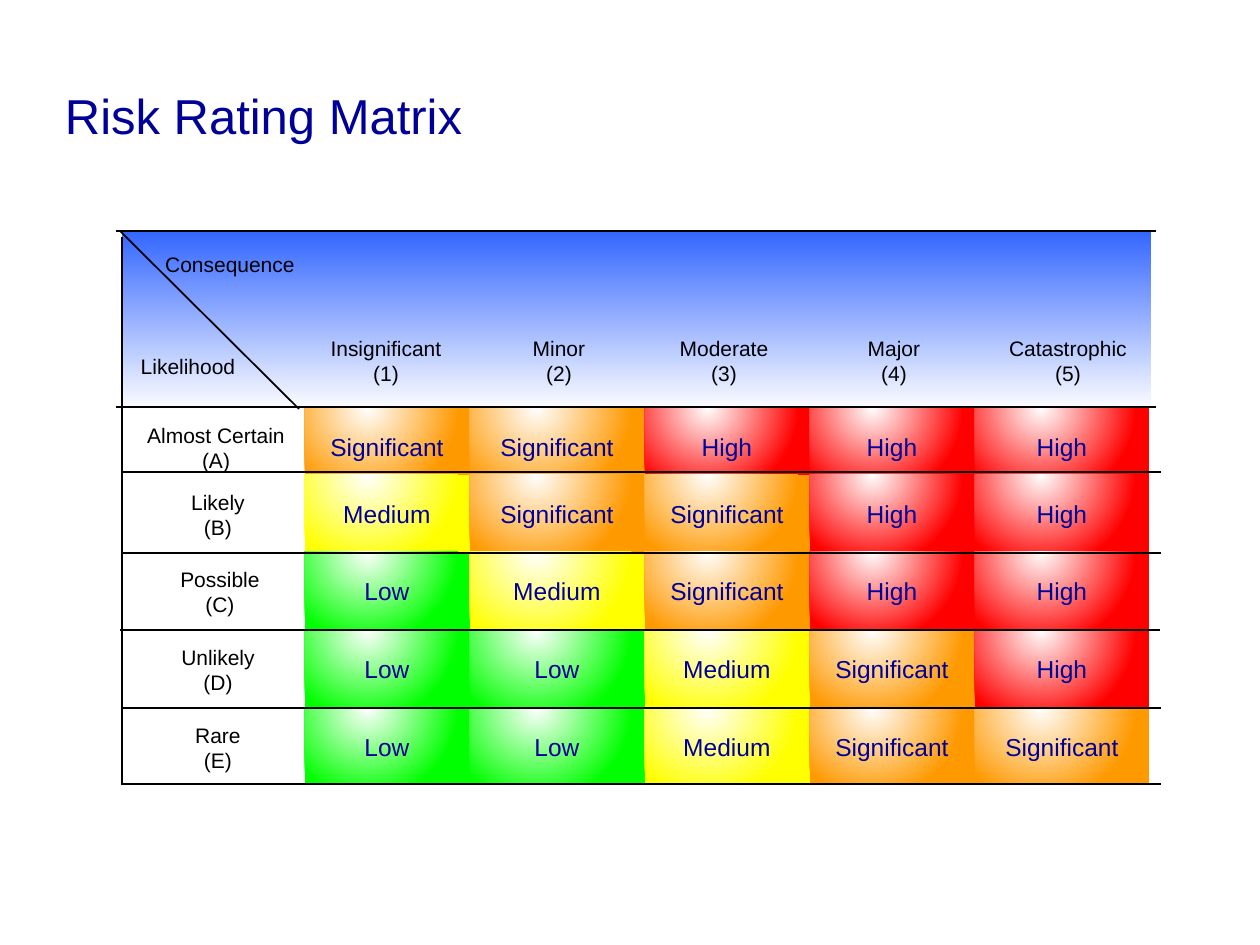
"""Build the risk rating matrix slide."""
from dataclasses import dataclass

import lxml.etree
import pptx
import pptx.dml.color
import pptx.enum.shapes
import pptx.enum.text
import pptx.oxml.ns
import pptx.util

PX = 914400 / 126
COLORS = {"white": "FFFFFF", "black": "000000", "navy": "000099", "header": "3366FF"}


@dataclass(frozen=True)
class Rating:
    name: str
    color: str
    width: int


@dataclass(frozen=True)
class Heading:
    name: str
    code: str
    center: int
    width: int


@dataclass(frozen=True)
class Row:
    heading: Heading
    top: int
    height: int
    ratings: str


@dataclass(frozen=True)
class Line:
    x1: int
    y1: int
    x2: int
    y2: int


RATINGS = {
    "L": Rating("Low", "00FF00", 59),
    "M": Rating("Medium", "FFFF00", 101),
    "S": Rating("Significant", "FF9900", 127),
    "H": Rating("High", "FF0000", 64),
}
COLUMN_EDGES = [305, 470, 645, 810, 975, 1149]
CONSEQUENCES = [
    Heading("Insignificant", "(1)", 386, 131),
    Heading("Minor", "(2)", 559, 72),
    Heading("Moderate", "(3)", 724, 108),
    Heading("Major", "(4)", 894, 72),
    Heading("Catastrophic", "(5)", 1068, 137),
]
ROWS = [
    Row(Heading("Almost Certain", "(A)", 216, 158), 408, 78, "SSHHH"),
    Row(Heading("Likely", "(B)", 218, 73), 475, 77, "MSSHH"),
    Row(Heading("Possible", "(C)", 220, 100), 552, 78, "LMSHH"),
    Row(Heading("Unlikely", "(D)", 218, 93), 630, 78, "LLMSH"),
    Row(Heading("Rare", "(E)", 218, 66), 708, 77, "LLMSS"),
]
LINES = [
    Line(120, 231, 299, 409),
    Line(122, 237, 122, 783),
    *(Line(x, y, x + 1040, y) for x, y in [
        (121, 784), (121, 708), (120, 630), (121, 553), (121, 472), (116, 407), (116, 231)]),
]


def emu(px: float) -> int:
    return round(px * PX)


def rgb(color: str) -> pptx.dml.color.RGBColor:
    return pptx.dml.color.RGBColor.from_string(color)


def set_insets(tf) -> None:
    tf.margin_left = tf.margin_top = tf.margin_right = tf.margin_bottom = emu(6)


def add_run(p, text: str, size: int, color: str) -> None:
    r = p.add_run()
    r.text = text
    r.font.name = "Arial"
    r.font.size = pptx.util.Pt(size)
    r.font.color.rgb = rgb(color)


def add_label(shapes, texts: list[str], center: int, top: int, width: int, height: int,
              size: int = 12, color: str = COLORS["black"]) -> None:
    sp = shapes.add_textbox(emu(center - width / 2), emu(top), emu(width), emu(height))
    tf = sp.text_frame
    set_insets(tf)
    tf.word_wrap = False
    tf.auto_size = pptx.enum.text.MSO_AUTO_SIZE.SHAPE_TO_FIT_TEXT
    tf.vertical_anchor = pptx.enum.text.MSO_ANCHOR.MIDDLE
    for i, text in enumerate(texts):
        p = tf.add_paragraph() if i else tf.paragraphs[0]
        p.alignment = pptx.enum.text.PP_ALIGN.CENTER
        add_run(p, text, size, color)


def add_heading(shapes, heading: Heading, top: int) -> None:
    add_label(shapes, [heading.name, heading.code], heading.center, top, heading.width, 61)


def add_gradient_rect(shapes, left: int, top: int, width: int, height: int, color: str):
    sp = shapes.add_shape(pptx.enum.shapes.MSO_SHAPE.RECTANGLE,
                          emu(left), emu(top), emu(width), emu(height))
    sp.shadow.inherit = False
    sp.line.fill.background()
    sp.fill.gradient()
    sp.fill.gradient_angle = 90
    for stop, stop_color in zip(sp.fill.gradient_stops, (COLORS["white"], color)):
        stop.color.rgb = rgb(stop_color)
    return sp


def make_radial(sp) -> None:
    qn = pptx.oxml.ns.qn
    grad = sp._element.spPr.find(qn("a:gradFill"))
    grad.remove(grad.find(qn("a:lin")))
    radial = lxml.etree.SubElement(grad, qn("a:path"), {"path": "circle"})
    lxml.etree.SubElement(radial, qn("a:fillToRect"),
                          {"l": "38000", "t": "-20000", "r": "62000", "b": "120000"})


def add_cell(shapes, left: int, width: int, row: Row, rating: Rating) -> None:
    group = shapes.add_group_shape()
    make_radial(add_gradient_rect(group.shapes, left, row.top, width, row.height, rating.color))
    add_label(group.shapes, [rating.name], left + width // 2, row.top + 19,
              rating.width, 39, 14, COLORS["navy"])


def add_line(shapes, line: Line) -> None:
    sp = shapes.add_connector(pptx.enum.shapes.MSO_CONNECTOR.STRAIGHT,
                              emu(line.x1), emu(line.y1), emu(line.x2), emu(line.y2))
    sp.line.color.rgb = rgb(COLORS["black"])
    sp.line.width = pptx.util.Pt(1)
    lxml.etree.SubElement(sp._element.spPr, pptx.oxml.ns.qn("a:effectLst"))


def add_title(s, text: str) -> None:
    sp = s.shapes.title
    sp.left, sp.top, sp.width, sp.height = emu(59), emu(83), emu(1050), emu(67)
    tf = sp.text_frame
    set_insets(tf)
    tf.word_wrap = True
    tf.auto_size = pptx.enum.text.MSO_AUTO_SIZE.SHAPE_TO_FIT_TEXT
    tf.vertical_anchor = pptx.enum.text.MSO_ANCHOR.BOTTOM
    p = tf.paragraphs[0]
    p.alignment = pptx.enum.text.PP_ALIGN.LEFT
    add_run(p, text, 28, COLORS["navy"])


def main() -> None:
    prs = pptx.Presentation()
    prs.slide_width, prs.slide_height = emu(1260), emu(945)
    s = prs.slides.add_slide(prs.slide_layouts[5])
    add_title(s, "Risk Rating Matrix")
    add_gradient_rect(s.shapes, 122, 231, 1029, 180, COLORS["header"])
    for heading in CONSEQUENCES:
        add_heading(s.shapes, heading, 330)
    for row in ROWS:
        add_heading(s.shapes, row.heading, row.top + 9)
        for left, right, key in zip(COLUMN_EDGES, COLUMN_EDGES[1:], row.ratings):
            add_cell(s.shapes, left, right - left, row, RATINGS[key])
    add_label(s.shapes, ["Consequence"], 230, 246, 144, 37)
    add_label(s.shapes, ["Likelihood"], 188, 348, 108, 37)
    for line in LINES:
        add_line(s.shapes, line)
    prs.save("out.pptx")


if __name__ == "__main__":
    main()
